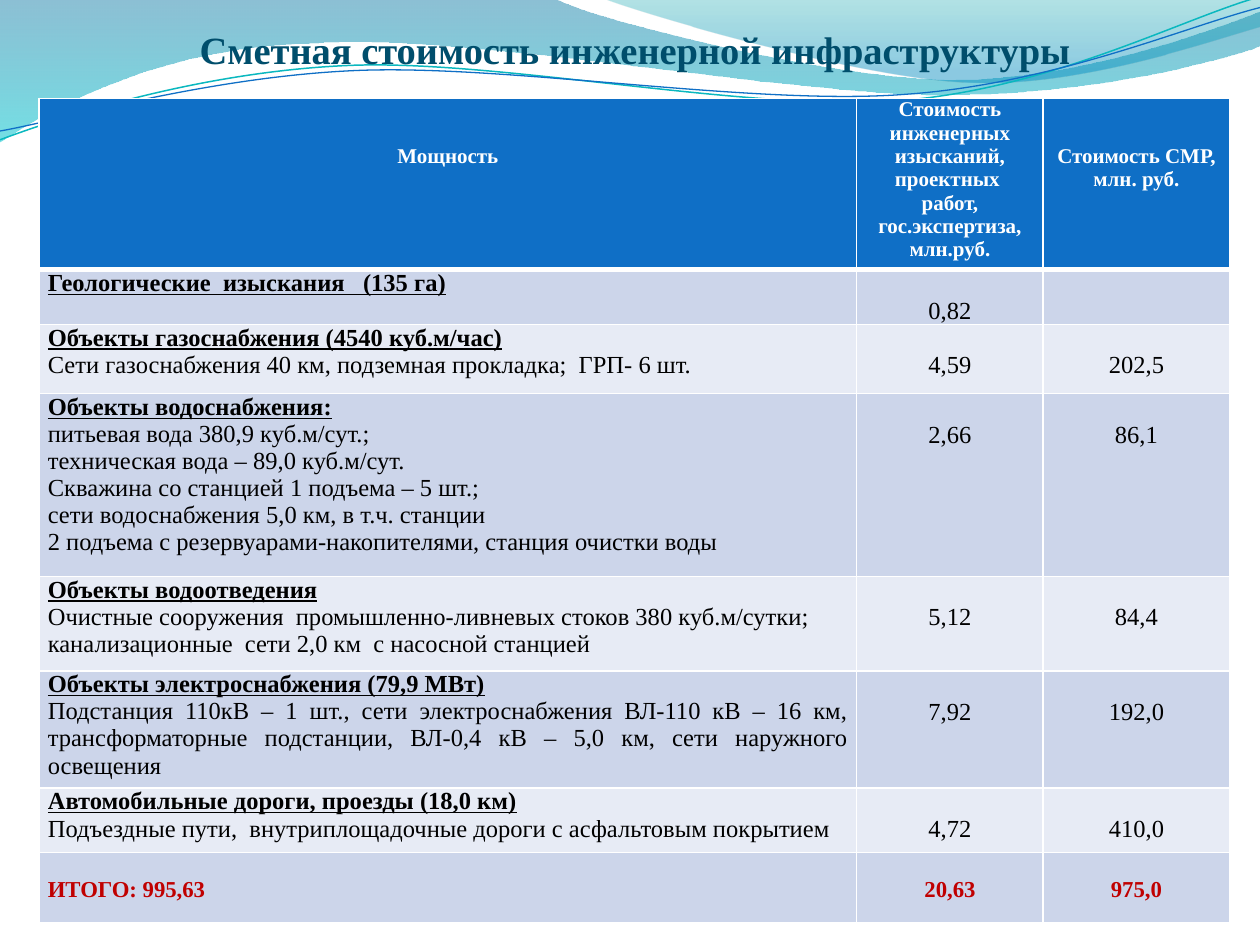
from dataclasses import dataclass

from lxml import etree
from pptx import Presentation
from pptx.dml.color import RGBColor
from pptx.enum.text import PP_ALIGN
from pptx.oxml.ns import qn
from pptx.util import Inches, Pt

LEFT, CENTER, JUSTIFY = PP_ALIGN.LEFT, PP_ALIGN.CENTER, PP_ALIGN.JUSTIFY


@dataclass(frozen=True)
class Theme:
    font: str = "Times New Roman"
    title: str = "004E6C"
    header: str = "0F6FC6"
    bands: tuple = ("CCD5EA", "E7EBF5")
    white: str = "FFFFFF"
    text: str = "000000"
    total: str = "C00000"
    title_size: int = 22
    header_size: int = 12
    body_size: int = 14
    total_size: int = 13


THEME = Theme()


def add_wave(start, segments, closed):
    """Freeform from points (x, y) and cubic segments (x1, y1, x2, y2, x, y)."""
    points = [(x, y) for seg in segments for x, y in zip(seg[::2], seg[1::2])]
    hundredths = [(round(x * 100), round(y * 100)) for x, y in [start] + points]
    fb = s.shapes.build_freeform(*hundredths[0], scale=Inches(0.01))
    fb.add_line_segments(hundredths[1:], close=closed)
    sp = fb.convert_to_shape()
    sp.shadow.inherit = False

    # Gather the three points of each cubic segment into one curve
    steps = iter(list(sp._element.spPr.iter(qn("a:lnTo"))))
    for seg in segments:
        group = [next(steps) for _ in range(len(seg) // 2)]
        if len(group) == 3:
            group[0].addprevious(curve := etree.Element(qn("a:cubicBezTo")))
            for step in group:
                curve.append(step[0])
                step.getparent().remove(step)
    return sp


def add_run(p, text, size, color, bold=False, underline=False):
    r = p.add_run()
    r.text = text
    r.font.name = THEME.font
    r.font.size = Pt(size)
    r.font.color.rgb = RGBColor.from_string(color)
    r.font.bold = bold
    r.font.underline = underline


prs = Presentation()
prs.slide_width, prs.slide_height = Inches(10), Inches(7.5)
s = prs.slides.add_slide(prs.slide_layouts[6])

# Translucent waves: start, segments, gradient stops (position, colour, opacity %)
filled_waves = [
    ((0, 0),
     [(4.4, -0.01), (4.76, 0.17, 6.64, 0.63, 7.58, 0.63), (8.53, 0.63, 9.58, 0.26, 10, 0.09),
      (10.01, 0.36), (9.83, 0.44, 8.7, 0.76, 7.46, 0.75), (6.22, 0.75, 3.82, 0.28, 2.57, 0.34),
      (1.29, 0.36, 0.46, 0.83, -0.01, 1.13)],
     [(0, "0074A1", 45), (1, "00C6CF", 55)]),
    ((4.79, -0.01),
     [(5.09, 0.11, 6.82, 0.62, 7.69, 0.65), (8.56, 0.69, 9.61, 0.32, 10, 0.21), (10, 0)],
     [(0, "00A1A9", 30), (0.8, "008BBF", 45)]),
]
for start, segments, stops in filled_waves:
    sp = add_wave(start, segments, True)
    sp.line.fill.background()
    sp.fill.gradient()
    sp.fill.gradient_angle = 270
    for stop, (position, color, _) in zip(sp.fill.gradient_stops, stops):
        stop.position = position
        stop.color.rgb = RGBColor.from_string(color)
    for clr, (_, _, opacity) in zip(sp._element.spPr.iter(qn("a:srgbClr")), stops):
        etree.SubElement(clr, qn("a:alpha"), val=str(opacity * 1000))

# Thin wave lines
line_waves = [
    ((0, 1.11),
     [(0.48, 0.93, 1.58, 0.57, 2.77, 0.52), (3.95, 0.47, 5.93, 0.89, 7.13, 0.8),
      (8.33, 0.71, 9.38, 0.15, 9.98, -0.02)], "0AB8BF", 0.85),
    ((0, 1.04),
     [(0.47, 0.96, 1.64, 0.61, 2.83, 0.56), (4.03, 0.51, 5.97, 0.84, 7.17, 0.75),
      (8.36, 0.67, 9.41, 0.21, 10, 0.06)], "0F6FC6", 0.75),
]
for start, segments, color, width in line_waves:
    sp = add_wave(start, segments, False)
    sp.fill.background()
    sp.line.color.rgb = RGBColor.from_string(color)
    sp.line.width = Pt(width)

# Table content: first line of a body row is its heading
header = [["Мощность"],
          ["Стоимость инженерных изысканий,", "проектных  работ, гос.экспертиза, млн.руб."],
          ["Стоимость СМР, млн. руб."]]
body = [
    (["Геологические  изыскания   (135 га)"], ["0,82"], []),
    (["Объекты газоснабжения (4540 куб.м/час)",
      "Сети газоснабжения 40 км, подземная прокладка;  ГРП- 6 шт."], ["4,59"], ["202,5"]),
    (["Объекты водоснабжения:",
      "питьевая вода 380,9 куб.м/сут.;",
      "техническая вода – 89,0 куб.м/сут.",
      "Скважина со станцией 1 подъема – 5 шт.;",
      "сети водоснабжения 5,0 км, в т.ч. станции",
      "2 подъема с резервуарами-накопителями, станция очистки воды"], ["2,66"], ["86,1"]),
    (["Объекты водоотведения",
      "Очистные сооружения  промышленно-ливневых стоков 380 куб.м/сутки;",
      "канализационные  сети 2,0 км  с насосной станцией"], ["5,12"], ["84,4"]),
    (["Объекты электроснабжения (79,9 МВт)",
      "Подстанция 110кВ – 1 шт., сети электроснабжения ВЛ-110 кВ – 16 км, "
      "трансформаторные подстанции, ВЛ-0,4 кВ – 5,0 км, сети наружного освещения"],
     ["7,92"], ["192,0"]),
    (["Автомобильные дороги, проезды (18,0 км)",
      "Подъездные пути,  внутриплощадочные дороги с асфальтовым покрытием"],
     ["4,72"], ["410,0"]),
    (["ИТОГО: 995,63"], ["20,63"], ["975,0"]),
]
rows = [header] + body
col_widths = [6.49, 1.48, 1.48]
row_heights = [1.36, 0.43, 0.55, 1.45, 0.75, 0.93, 0.51, 0.56]
last = len(rows) - 1

table = s.shapes.add_table(len(rows), len(col_widths), Inches(0.31), Inches(0.78),
                           Inches(sum(col_widths)), Inches(sum(row_heights))).table
for column, width in zip(table.columns, col_widths):
    column.width = Inches(width)
for row, height in zip(table.rows, row_heights):
    row.height = Inches(height)

for i, row in enumerate(rows):
    for j, lines in enumerate(row):
        cell = table.cell(i, j)

        # Type and drop of the first line
        if i == 0:
            size, color, fill = THEME.header_size, THEME.white, THEME.header
            drop = 0 if j == 1 else 0.37
        else:
            size, color, fill = THEME.body_size, THEME.text, THEME.bands[(i - 1) % 2]
            drop = 0.22 if j and lines else 0
            if i == last:
                size, color, drop = THEME.total_size, THEME.total, 0.2
        cell.margin_left = cell.margin_right = Inches(0.07)
        cell.margin_top, cell.margin_bottom = Inches(drop), 0

        # Text
        for k, line in enumerate(lines):
            p = cell.text_frame.paragraphs[0] if k == 0 else cell.text_frame.add_paragraph()
            p.alignment = CENTER if i == 0 or j else LEFT if i == 1 else JUSTIFY
            heading = 0 < i < last and j == 0 and k == 0
            add_run(p, line, size, color, heading or i in (0, last), heading)

        # Borders come before the fill in the cell properties
        tc_pr = cell._tc.get_or_add_tcPr()
        for side in ("L", "R", "T", "B"):
            thick = (i, side) in ((0, "B"), (1, "T"))
            ln = etree.SubElement(tc_pr, qn("a:ln" + side), w=str(Pt(3 if thick else 1)))
            solid = etree.SubElement(ln, qn("a:solidFill"))
            etree.SubElement(solid, qn("a:srgbClr"), val=THEME.white)
        cell.fill.solid()
        cell.fill.fore_color.rgb = RGBColor.from_string(fill)

# Title
tf = s.shapes.add_textbox(Inches(0.39), Inches(0.16), Inches(9.3), Inches(0.77)).text_frame
tf.word_wrap = True
p = tf.paragraphs[0]
p.alignment = CENTER
add_run(p, "Сметная стоимость инженерной инфраструктуры",
        THEME.title_size, THEME.title, bold=True)

prs.save("out.pptx")
